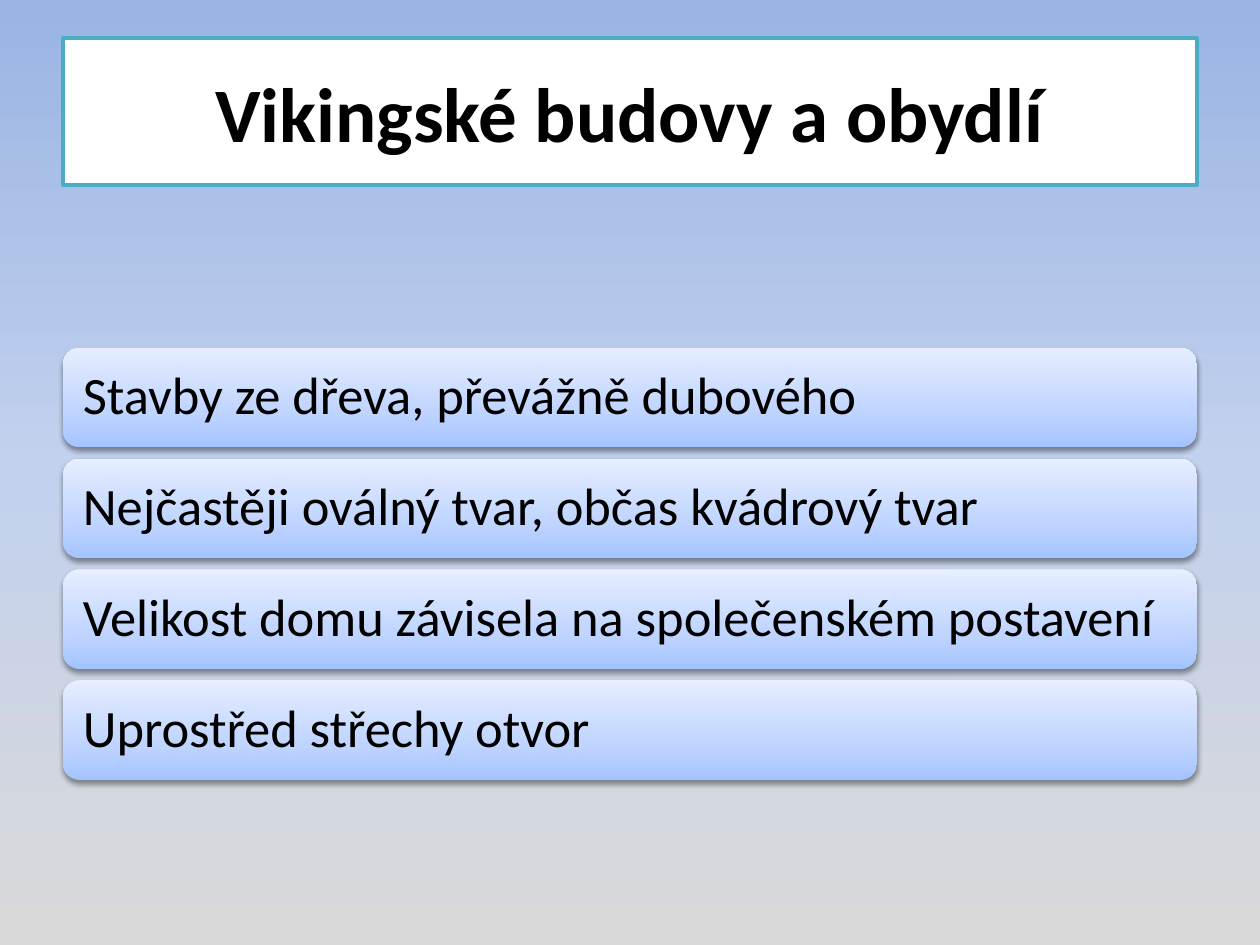
import dataclasses

import lxml.etree
import pptx
import pptx.dml.color
import pptx.enum.shapes
import pptx.enum.text
import pptx.oxml
import pptx.oxml.ns
import pptx.util
from pptx.util import Inches


@dataclasses.dataclass(frozen=True)
class Theme:
    font: str = "Calibri"
    title_size: int = 44
    bar_size: int = 30
    text: str = "000000"
    title_fill: str = "FFFFFF"
    title_line: str = "4BACC6"
    background: tuple = ((0, "9AB5E4"), (50, "C2D1ED"), (100, "D9D9D9"))
    bar: tuple = ((0, "A4C4FF"), (35, "BFD4FF"), (100, "E6EEFF"))


theme = Theme()
qn = pptx.oxml.ns.qn


def write_text(box, text, size, bold=False, align=pptx.enum.text.PP_ALIGN.LEFT,
               inset=0.1, line_spacing=1.0):
    frame = box.text_frame
    frame.word_wrap = True
    frame.vertical_anchor = pptx.enum.text.MSO_ANCHOR.MIDDLE
    frame.margin_left = frame.margin_right = Inches(inset)
    frame.margin_top = frame.margin_bottom = Inches(min(inset, 0.12))
    para = frame.paragraphs[0]
    para.alignment = align
    para.line_spacing = line_spacing
    span = para.add_run()
    span.text = text
    span.font.name = theme.font
    span.font.size = pptx.util.Pt(size)
    span.font.bold = bold
    span.font.color.rgb = pptx.dml.color.RGBColor.from_string(theme.text)


def set_gradient(fill, owner, stops, angle):
    """Fill with any number of colour stops; angle runs counter-clockwise."""
    fill.gradient()
    fill.gradient_angle = angle
    stop_list = owner.find(".//" + qn("a:gsLst"))
    for stop in list(stop_list):
        stop_list.remove(stop)
    for percent, color in stops:
        stop = lxml.etree.SubElement(stop_list, qn("a:gs"), pos=str(percent * 1000))
        lxml.etree.SubElement(stop, qn("a:srgbClr"), val=color)


deck = pptx.Presentation()
deck.slide_width, deck.slide_height = Inches(10), Inches(7.5)
page = deck.slides.add_slide(deck.slide_layouts[6])

# Background, shaded from top to bottom
set_gradient(page.background.fill, page.element, theme.background, 270)

# Title
title = page.shapes.add_shape(pptx.enum.shapes.MSO_SHAPE.RECTANGLE,
                              Inches(0.5), Inches(0.3), Inches(9), Inches(1.17))
title.shadow.inherit = False
title.fill.solid()
title.fill.fore_color.rgb = pptx.dml.color.RGBColor.from_string(theme.title_fill)
title.line.color.rgb = pptx.dml.color.RGBColor.from_string(theme.title_line)
title.line.width = pptx.util.Pt(2)
write_text(title, "Vikingské budovy a obydlí", theme.title_size, bold=True,
           align=pptx.enum.text.PP_ALIGN.CENTER)

# Bars with a soft shadow below
facts = [
    "Stavby ze dřeva, převážně dubového",
    "Nejčastěji oválný tvar, občas kvádrový tvar",
    "Velikost domu závisela na společenském postavení",
    "Uprostřed střechy otvor",
]
for index, fact in enumerate(facts):
    bar = page.shapes.add_shape(pptx.enum.shapes.MSO_SHAPE.ROUNDED_RECTANGLE,
                                Inches(0.5), Inches(2.76 + 0.88 * index),
                                Inches(9), Inches(0.79))
    bar.line.fill.background()
    set_gradient(bar.fill, bar.element, theme.bar, 90)
    bar.shadow.inherit = False
    effects = bar.element.spPr.find(qn("a:effectLst"))
    shadow = lxml.etree.SubElement(
        effects, qn("a:outerShdw"), blurRad=str(pptx.util.Pt(3.1)),
        dist=str(pptx.util.Pt(1.6)), dir="5400000", rotWithShape="0")
    color = lxml.etree.SubElement(shadow, qn("a:srgbClr"), val=theme.text)
    lxml.etree.SubElement(color, qn("a:alpha"), val="38000")
    write_text(bar, fact, theme.bar_size, inset=0.12, line_spacing=0.9)

deck.save("out.pptx")
